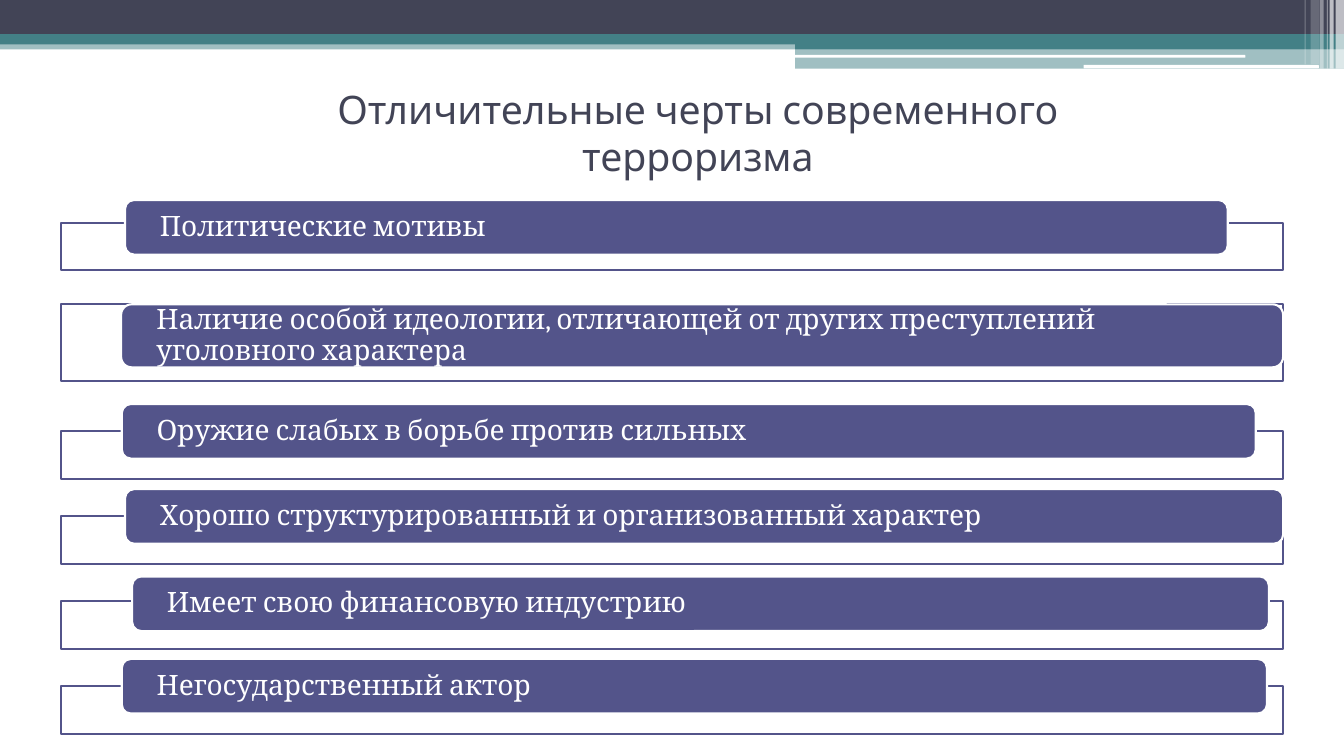
import pptx
import pptx.util
import pptx.dml.color
import pptx.enum.shapes
import pptx.enum.text
import pptx.oxml

Pt = pptx.util.Pt
SHAPE = pptx.enum.shapes.MSO_SHAPE
ALIGN = pptx.enum.text.PP_ALIGN
WIDTH, HEIGHT = 960, 540
SLATE, TEAL, INDIGO, WHITE = "424456", "438086", "53548A", "FFFFFF"
A_NS = "http://schemas.openxmlformats.org/drawingml/2006/main"

# Text, frame top and height, pill left, top, width and height
FEATURES = [
    ("Политические мотивы", 159.1, 34, 89.3, 142.9, 787.7, 39),
    ("Наличие особой идеологии, отличающей от других преступлений уголовного характера",
     217.2, 55.2, 86.5, 217.4, 830, 45),
    ("Оружие слабых в борьбе против сильных", 308, 34, 87, 288.6, 810, 39),
    ("Хорошо структурированный и организованный характер",
     368.7, 34, 89.3, 349.4, 827.3, 39),
    ("Имеет свою финансовую индустрию", 429.5, 34, 94.4, 411.8, 812, 39),
    ("Негосударственный актор", 490.2, 34, 87, 470.7, 818, 39),
]


def paint(color_format, hex_color):
    color_format.rgb = pptx.dml.color.RGBColor.from_string(hex_color)


def add_block(slide, kind, box, fill, opacity=100, line=None):
    block = slide.shapes.add_shape(kind, *(Pt(length) for length in box))
    block.shadow.inherit = False
    block.fill.solid()
    paint(block.fill.fore_color, fill)
    if opacity < 100:
        color = block.fill._xPr.find(f".//{{{A_NS}}}srgbClr")
        color.append(pptx.oxml.parse_xml(
            f'<a:alpha xmlns:a="{A_NS}" val="{opacity * 1000}"/>'))
    if line:
        paint(block.line.color, line)
        block.line.width = Pt(1.5)
    else:
        block.line.fill.background()
    return block


def write(shape, text, font, size, color, align=ALIGN.LEFT, spacing=None, insets=None):
    frame = shape.text_frame
    frame.word_wrap = True
    frame.auto_size = pptx.enum.text.MSO_AUTO_SIZE.NONE
    frame.vertical_anchor = pptx.enum.text.MSO_ANCHOR.MIDDLE
    if insets:
        frame.margin_left = frame.margin_right = Pt(insets[0])
        frame.margin_top = frame.margin_bottom = Pt(insets[1])
    paragraph = frame.paragraphs[0]
    paragraph.alignment = align
    paragraph.line_spacing = spacing
    run = paragraph.add_run()
    run.text = text
    run.font.name = font
    run.font.size = Pt(size)
    paint(run.font.color, color)


def add_header(slide, left, top, width):
    right = left + width
    half = left + 568
    # Bands across the slide, then the stepped right half
    for x, y, height, color, opacity in [
        (left, 28.8, 6.5, TEAL, 50),
        (left, 0, 24.5, SLATE, 100),
        (left, 24.5, 7.2, TEAL, 100),
        (half, 28, 7.2, TEAL, 100),
        (half, 35, 14, TEAL, 50),
    ]:
        add_block(slide, SHAPE.RECTANGLE, (x, top + y, right - x, height), color, opacity)
    # White slits
    for x, y, length, height in [(567.5, 39.2, 322, 2), (774, 46.3, 168, 2.6)]:
        add_block(slide, SHAPE.ROUNDED_RECTANGLE,
                  (left + x, top + y, length, height), WHITE)
    # Translucent stripes at the right edge
    for offset, thickness, height, opacity in [
        (6, 6, 49, 65), (10.3, 2.9, 49, 65), (12.3, 0.7, 49, 60),
        (17.3, 2.9, 49, 40), (23.8, 5.8, 46, 20), (28.1, 0.7, 46, 30),
    ]:
        add_block(slide, SHAPE.RECTANGLE,
                  (right - offset, top, thickness, height), WHITE, opacity)


def add_title(slide, left, top, width, height):
    title = slide.shapes.title
    title.left, title.top = Pt(left), Pt(top)
    title.width, title.height = Pt(width), Pt(height)
    write(title, "Отличительные черты современного терроризма",
          font="Cabin", size=28, color=SLATE, align=ALIGN.CENTER)


def add_features(slide, left, width):
    for text, top, height, *pill_box in FEATURES:
        add_block(slide, SHAPE.RECTANGLE, (left, top, width, height),
                  WHITE, opacity=90, line=INDIGO)
        pill = add_block(slide, SHAPE.ROUNDED_RECTANGLE, pill_box, INDIGO, line=WHITE)
        write(pill, text, font="Cambria", size=20, color=WHITE,
              spacing=0.9, insets=(23, 0))


def main():
    deck = pptx.Presentation()
    deck.slide_width, deck.slide_height = Pt(WIDTH), Pt(HEIGHT)
    slide = deck.slides.add_slide(deck.slide_layouts[5])
    add_header(slide, 0, 0, WIDTH)
    add_title(slide, 157, 55, 683, 79)
    add_features(slide, 43.4, 873.2)
    deck.save("out.pptx")


if __name__ == "__main__":
    main()
